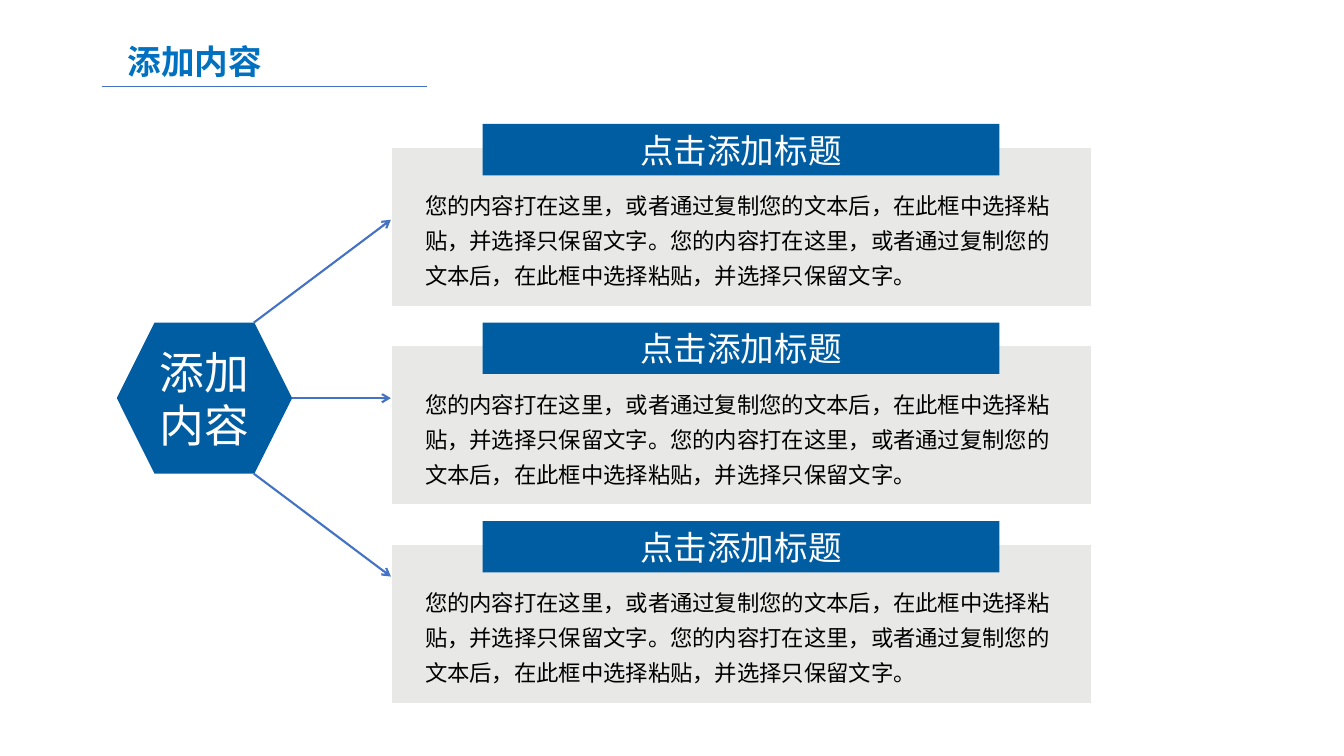
from lxml import etree
from pptx import Presentation
from pptx.dml.color import RGBColor
from pptx.enum.shapes import MSO_CONNECTOR, MSO_SHAPE
from pptx.enum.text import MSO_ANCHOR, MSO_AUTO_SIZE, PP_ALIGN
from pptx.oxml.ns import qn
from pptx.util import Inches, Pt

STRAIGHT = MSO_CONNECTOR.STRAIGHT
RECTANGLE, HEXAGON = MSO_SHAPE.RECTANGLE, MSO_SHAPE.HEXAGON
TOP, MIDDLE = MSO_ANCHOR.TOP, MSO_ANCHOR.MIDDLE
LEFT, CENTER = PP_ALIGN.LEFT, PP_ALIGN.CENTER
GROW = MSO_AUTO_SIZE.SHAPE_TO_FIT_TEXT

TITLE = "添加内容"
HUB = "添加内容"
BODY = (
    "您的内容打在这里，或者通过复制您的文本后，在此框中选择粘贴，并选择只保留文字。"
    "您的内容打在这里，或者通过复制您的文本后，在此框中选择粘贴，并选择只保留文字。"
)
CARDS = [("点击添加标题", BODY)] * 3

FONT = "Noto Sans CJK SC"
COLORS = {
    "title": "0070C0",
    "blue": "005DA2",
    "line": "4472C4",
    "panel": "E8E8E6",
    "white": "FFFFFF",
    "black": "000000",
}

CARD_TOP, CARD_PITCH = 1.23, 1.97
PANEL_LEFT = 3.88
HUB_LEFT, HUB_TOP, HUB_WIDTH, HUB_HEIGHT = 1.16, 3.2, 1.74, 1.5
HUB_SLANT = 0.38


def color(name):
    return RGBColor.from_string(COLORS[name])


def place(shape, left, top, width, height):
    shape.left, shape.top = Inches(left), Inches(top)
    shape.width, shape.height = Inches(width), Inches(height)


def write(shape, text, size, color_name, align=CENTER, anchor=MIDDLE, bold=False):
    frame = shape.text_frame
    frame.text = text
    frame.word_wrap = True
    frame.vertical_anchor = anchor
    para = frame.paragraphs[0]
    para.alignment = align
    font = para.runs[0].font
    font.size, font.bold, font.name = Pt(size), bold, FONT
    font.color.rgb = color(color_name)
    # East Asian characters take their typeface from a:ea
    etree.SubElement(font._element, qn("a:ea"), typeface=FONT)
    return para


def add_block(slide, kind, box, fill, outline=None):
    block = slide.shapes.add_shape(kind, *map(Inches, box))
    block.shadow.inherit = False
    block.fill.solid()
    block.fill.fore_color.rgb = color(fill)
    if outline:
        block.line.color.rgb = color(outline)
        block.line.width = Pt(1)
    else:
        block.line.fill.background()
    return block


def add_line(slide, start, end, width, arrow=False):
    line = slide.shapes.add_connector(STRAIGHT, *map(Inches, start + end))
    line.line.color.rgb = color("line")
    line.line.width = Pt(width)
    if arrow:
        etree.SubElement(line.line._get_or_add_ln(), qn("a:tailEnd"), type="arrow")
    etree.SubElement(line._element.spPr, qn("a:effectLst"))


def add_card(slide, top, heading, body):
    add_block(slide, RECTANGLE, (PANEL_LEFT, top + 0.23, 6.96, 1.58), "panel", "white")
    banner = add_block(slide, RECTANGLE, (4.79, top, 5.13, 0.51), "blue")
    write(banner, heading, 24, "white")
    box = slide.shapes.add_textbox(*map(Inches, (4.12, top + 0.55, 6.62, 1.15)))
    para = write(box, body, 16, "black", LEFT, TOP)
    para.line_spacing = 1.3
    box.text_frame.auto_size = GROW


def main():
    deck = Presentation()
    deck.slide_width, deck.slide_height = Inches(13.34), Inches(7.5)
    slide = deck.slides.add_slide(deck.slide_layouts[5])

    title = slide.shapes.title
    place(title, 1.16, 0.36, 1.55, 0.5)
    write(title, TITLE, 24, "title", anchor=TOP, bold=True)
    title.text_frame.word_wrap = False
    title.text_frame.auto_size = GROW
    add_line(slide, (1.01, 0.86), (4.24, 0.86), 0.5)

    for index, (heading, body) in enumerate(CARDS):
        add_card(slide, CARD_TOP + index * CARD_PITCH, heading, body)

    hub = add_block(slide, HEXAGON, (HUB_LEFT, HUB_TOP, HUB_WIDTH, HUB_HEIGHT), "blue")
    write(hub, HUB, 32, "white")

    hub_right = HUB_LEFT + HUB_WIDTH
    hub_middle = HUB_TOP + HUB_HEIGHT / 2
    for step in (-1, 0, 1):
        start = (hub_right - abs(step) * HUB_SLANT, hub_middle + step * HUB_HEIGHT / 2)
        end = (PANEL_LEFT, hub_middle + step * 1.77)
        add_line(slide, start, end, 1.5, arrow=True)

    deck.save("out.pptx")


if __name__ == "__main__":
    main()
